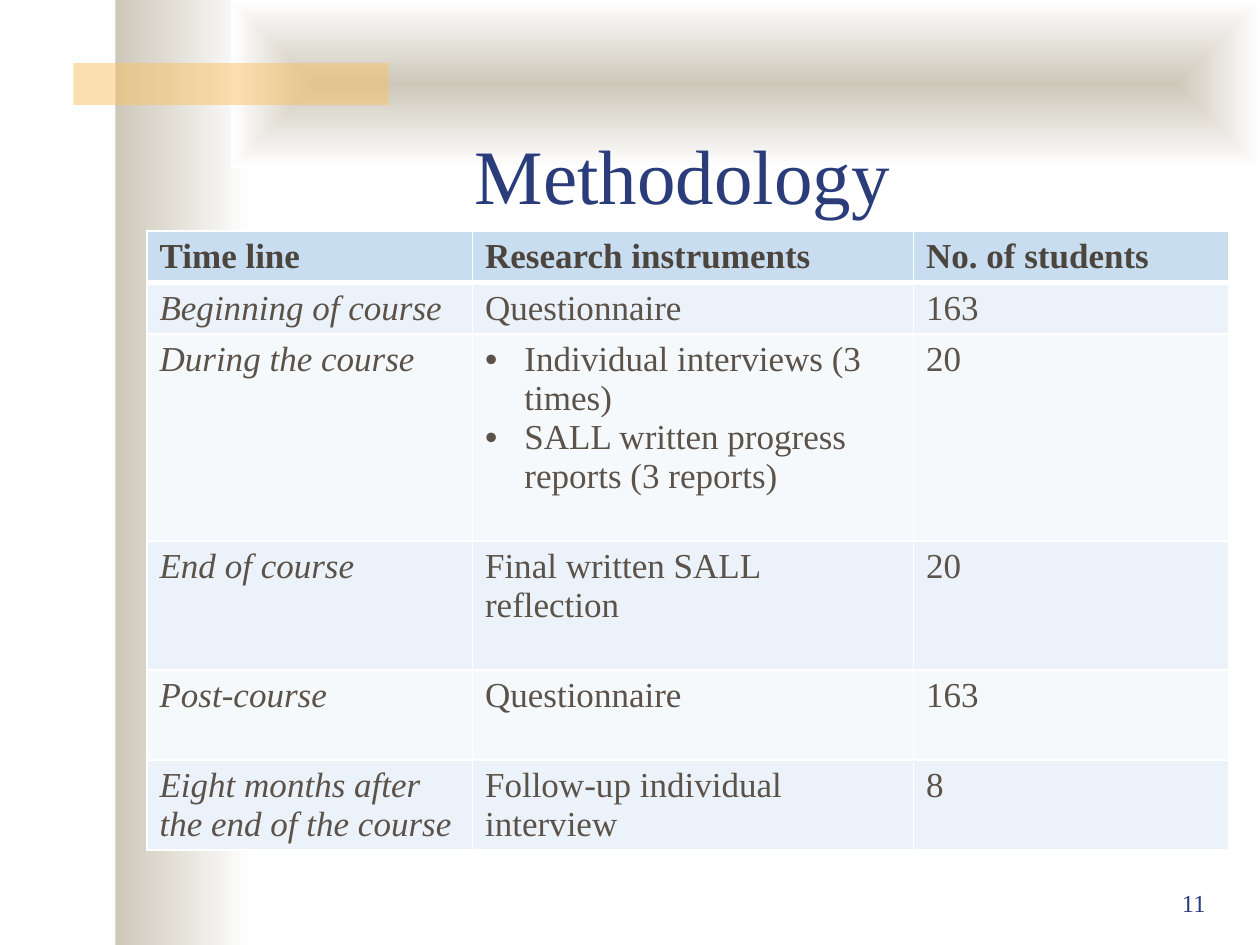
from dataclasses import dataclass

from lxml.etree import SubElement
from pptx import Presentation
from pptx.dml.color import RGBColor as RGB
from pptx.enum.shapes import MSO_SHAPE as Shape
from pptx.enum.text import MSO_ANCHOR as Anchor, PP_ALIGN as Align
from pptx.oxml.ns import qn
from pptx.util import Pt


@dataclass(frozen=True)
class Theme:
    font: str = "Times New Roman"
    title_size: int = 44
    table_size: int = 20
    number_size: int = 14
    navy: str = "2A3D7A"
    header_text: str = "4C453D"
    body_text: str = "5B5249"
    header_fill: str = "C9DDF1"
    bands: tuple[str, str] = ("EBF2FA", "F5F9FC")
    sand: str = "CEC8BA"
    amber: str = "FAC164"
    white: str = "FFFFFF"


@dataclass(frozen=True)
class Box:
    left: float
    top: float
    width: float
    height: float

    def lengths(self) -> list[Pt]:
        return [Pt(v) for v in (self.left, self.top, self.width, self.height)]


@dataclass(frozen=True)
class Stage:
    time: str
    instruments: tuple[str, ...]
    students: str
    height: float


THEME = Theme()
HEADERS = ("Time line", "Research instruments", "No. of students")
HEADER_HEIGHT = 29.4
COLUMN_WIDTHS = (186, 252, 180)
BULLET_INDENT = 22.5
STAGES = (
    Stage("Beginning of course", ("Questionnaire",), "163", 29.4),
    Stage("During the course", ("Individual interviews (3 times)",
                                "SALL written progress reports (3 reports)"), "20", 118.3),
    Stage("End of course", ("Final written SALL reflection",), "20", 73.7),
    Stage("Post-course", ("Questionnaire",), "163", 51.4),
    Stage("Eight months after the end of the course",
          ("Follow-up individual interview",), "8", 51.4),
)


def style(p, size: int, color: str, bold: bool = False, italic: bool = False) -> None:
    p.font.name, p.font.size = THEME.font, Pt(size)
    p.font.bold, p.font.italic = bold, italic
    p.font.color.rgb = RGB.from_string(color)


def add_panel(slide, box: Box):
    sp = slide.shapes.add_shape(Shape.RECTANGLE, *box.lengths())
    sp.shadow.inherit = False
    sp.line.fill.background()
    return sp


def add_gradient(slide, box: Box, from_center: bool = False) -> None:
    sp = add_panel(slide, box)
    sp.fill.gradient()
    sp.fill.gradient_angle = 0
    for stop, color in zip(sp.fill.gradient_stops, (THEME.sand, THEME.white)):
        stop.color.rgb = RGB.from_string(color)
    if from_center:
        grad = sp._element.spPr.find(qn("a:gradFill"))
        grad.remove(grad.find(qn("a:lin")))
        shade = SubElement(grad, qn("a:path"), path="shape")
        SubElement(shade, qn("a:fillToRect"), {side: "50000" for side in "ltrb"})


def add_accent(slide, box: Box) -> None:
    sp = add_panel(slide, box)
    sp.fill.solid()
    sp.fill.fore_color.rgb = RGB.from_string(THEME.amber)
    color = sp._element.spPr.find(qn("a:solidFill"))[0]
    SubElement(color, qn("a:alpha"), val="50000")


def set_borders(cell, top: float, bottom: float) -> None:
    tc_pr = cell._tc.get_or_add_tcPr()
    for side, width in (("L", 1), ("R", 1), ("T", top), ("B", bottom)):
        ln = SubElement(tc_pr, qn(f"a:ln{side}"), w=str(Pt(width)))
        fill = SubElement(ln, qn("a:solidFill"))
        SubElement(fill, qn("a:srgbClr"), val=THEME.white)


def fill_cell(cell, lines: tuple[str, ...], fill: str, color: str,
              bold: bool = False, italic: bool = False) -> None:
    cell.fill.solid()
    cell.fill.fore_color.rgb = RGB.from_string(fill)
    tf = cell.text_frame
    for i, line in enumerate(lines):
        p = tf.add_paragraph() if i else tf.paragraphs[0]
        p.text = line
        if len(lines) > 1:
            p_pr = p._p.get_or_add_pPr()
            p_pr.set("marL", str(Pt(BULLET_INDENT)))
            p_pr.set("indent", str(-Pt(BULLET_INDENT)))
            SubElement(p_pr, qn("a:buFont"), typeface="Arial")
            SubElement(p_pr, qn("a:buChar"), char="•")
        style(p, THEME.table_size, color, bold, italic)


def add_schedule(slide, left: float, top: float) -> None:
    heights = [HEADER_HEIGHT] + [stage.height for stage in STAGES]
    box = Box(left, top, sum(COLUMN_WIDTHS), sum(heights))
    table = slide.shapes.add_table(len(heights), len(COLUMN_WIDTHS), *box.lengths()).table
    for column, width in zip(table.columns, COLUMN_WIDTHS):
        column.width = Pt(width)
    for row, height in zip(table.rows, heights):
        row.height = Pt(height)

    # Header row, with a heavy rule below it
    for c, text in enumerate(HEADERS):
        cell = table.cell(0, c)
        set_borders(cell, top=1, bottom=3)
        fill_cell(cell, (text,), THEME.header_fill, THEME.header_text, bold=True)

    # Banded stage rows
    for r, stage in enumerate(STAGES, start=1):
        band = THEME.bands[(r - 1) % 2]
        for c, lines in enumerate(((stage.time,), stage.instruments, (stage.students,))):
            cell = table.cell(r, c)
            set_borders(cell, top=3 if r == 1 else 1, bottom=1)
            fill_cell(cell, lines, band, THEME.body_text, italic=c == 0)


def add_title(slide, text: str, box: Box) -> None:
    title = slide.shapes.title
    title.left, title.top, title.width, title.height = box.lengths()
    tf = title.text_frame
    tf.text = text
    tf.vertical_anchor = Anchor.MIDDLE
    p = tf.paragraphs[0]
    p.alignment = Align.CENTER
    style(p, THEME.title_size, THEME.navy)
    # Bring the title in front of the panels
    slide.shapes._spTree.append(title._element)


def add_page_number(slide, text: str, box: Box) -> None:
    tf = slide.shapes.add_textbox(*box.lengths()).text_frame
    tf.word_wrap = True
    p = tf.paragraphs[0]
    p.text = text
    p.alignment = Align.RIGHT
    style(p, THEME.number_size, THEME.navy)


def main() -> None:
    prs = Presentation()
    prs.slide_width, prs.slide_height = Pt(720), Pt(540)
    slide = prs.slides.add_slide(prs.slide_layouts[5])

    # Background decoration
    add_gradient(slide, Box(66, 0, 78, 540))
    add_gradient(slide, Box(132, 0, 588, 96), from_center=True)
    add_accent(slide, Box(42, 36, 180, 24))

    # Content
    add_title(slide, "Methodology", Box(84, 54, 612, 90))
    add_schedule(slide, 84, 132)
    add_page_number(slide, "11", Box(546, 504, 150, 36))
    prs.save("out.pptx")


if __name__ == "__main__":
    main()
